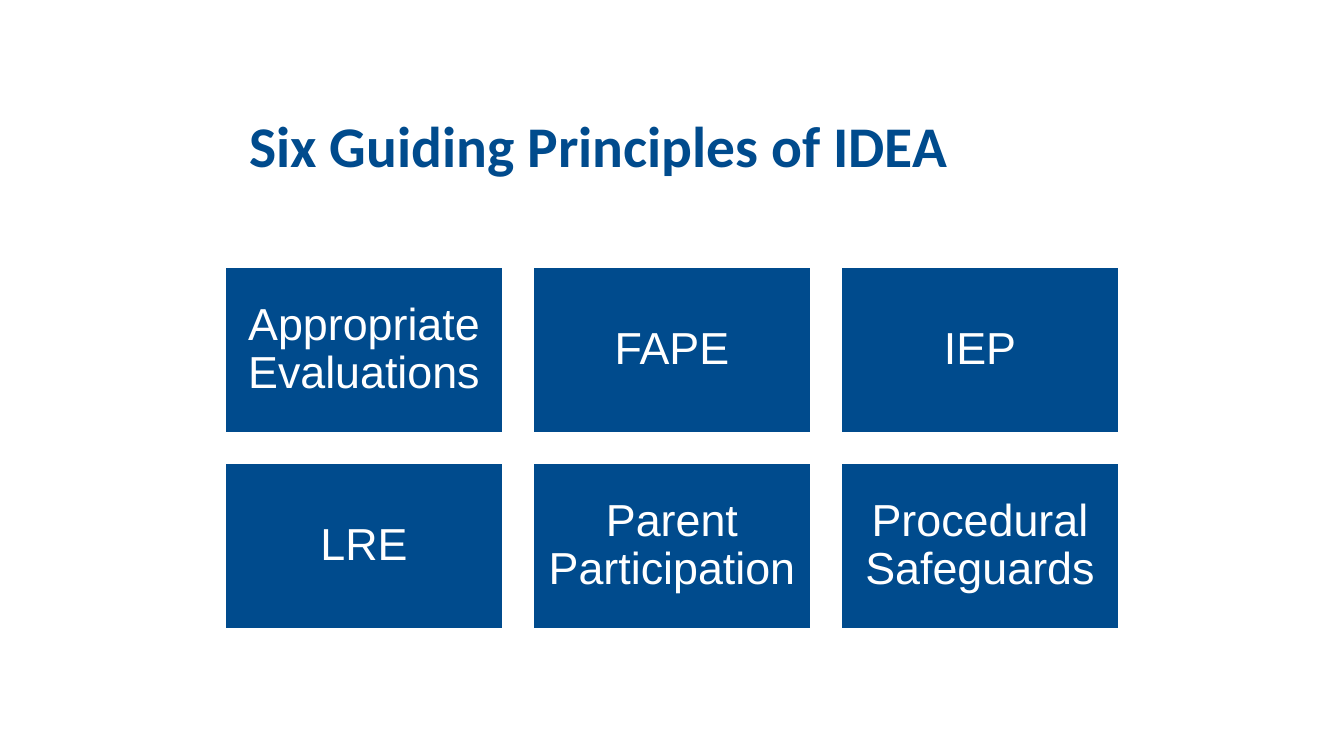
from dataclasses import dataclass

from pptx import Presentation
from pptx import util as u
from pptx.dml.color import RGBColor
from pptx.enum import shapes, text

PX = u.Inches(1) // 96  # 96 px to the inch


@dataclass(frozen=True)
class Theme:
    blue: RGBColor = RGBColor(0x00, 0x4B, 0x8D)
    white: RGBColor = RGBColor(0xFF, 0xFF, 0xFF)
    title_font: str = "Calibri"
    title_size: float = 30.8
    box_font: str = "Arial"
    box_size: float = 24
    outline: float = 2


THEME = Theme()

TITLE = "Six Guiding Principles of IDEA"
PRINCIPLES = [
    ["Appropriate Evaluations", "FAPE", "IEP"],
    ["LRE", "Parent Participation", "Procedural Safeguards"],
]
GRID_LEFT, GRID_TOP = 160, 190
BOX_W, BOX_H, GAP = 200, 120, 20


def px(*lengths):
    return [u.Emu(n * PX) for n in lengths]


def style_paragraph(p, font, size, color, align, spacing, bold=False):
    p.alignment = align
    p.line_spacing = spacing
    p.space_before = u.Pt(0)
    p.font.name = font
    p.font.size = u.Pt(size)
    p.font.bold = bold
    p.font.color.rgb = color


def set_frame(tf, inset_x, inset_y):
    tf.word_wrap = True
    tf.auto_size = text.MSO_AUTO_SIZE.NONE
    tf.vertical_anchor = text.MSO_ANCHOR.MIDDLE
    tf.margin_left = tf.margin_right = u.Emu(inset_x * PX)
    tf.margin_top = tf.margin_bottom = u.Emu(inset_y * PX)


def add_title(slide, words):
    sp = slide.shapes.title
    sp.left, sp.top, sp.width, sp.height = px(168, 72, 560, 72)
    tf = sp.text_frame
    tf.text = words
    set_frame(tf, 10, 5)
    style_paragraph(tf.paragraphs[0], THEME.title_font, THEME.title_size,
                    THEME.blue, text.PP_ALIGN.LEFT, 0.8, bold=True)


def add_principle(group, words, left, top):
    sp = group.shapes.add_shape(shapes.MSO_SHAPE.RECTANGLE,
                                *px(left, top, BOX_W, BOX_H))
    sp.shadow.inherit = False
    sp.fill.solid()
    sp.fill.fore_color.rgb = THEME.blue
    sp.line.color.rgb = THEME.white
    sp.line.width = u.Pt(THEME.outline)
    tf = sp.text_frame
    tf.text = words
    set_frame(tf, 9, 9)
    style_paragraph(tf.paragraphs[0], THEME.box_font, THEME.box_size,
                    THEME.white, text.PP_ALIGN.CENTER, 0.9)


def main():
    prs = Presentation()
    prs.slide_width, prs.slide_height = px(960, 540)
    title_only = prs.slide_layouts[5]
    slide = prs.slides.add_slide(title_only)
    add_title(slide, TITLE)
    grid = slide.shapes.add_group_shape()
    for row, names in enumerate(PRINCIPLES):
        for col, name in enumerate(names):
            add_principle(grid, name, GRID_LEFT + col * (BOX_W + GAP),
                          GRID_TOP + row * (BOX_H + GAP))
    prs.save("out.pptx")


if __name__ == "__main__":
    main()
